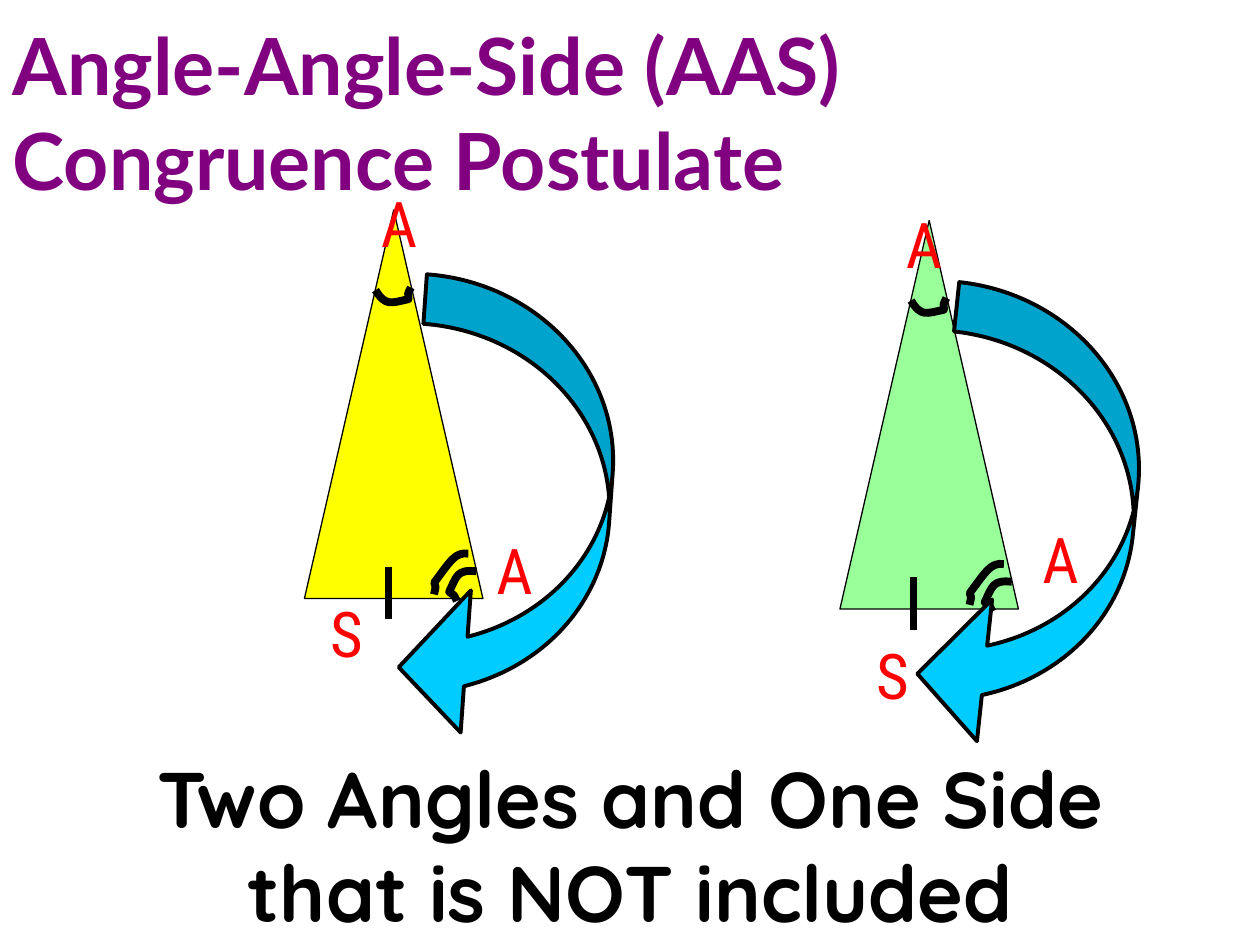
from dataclasses import dataclass

from lxml import etree
from pptx import Presentation
from pptx.dml.color import RGBColor
from pptx.enum.shapes import MSO_CONNECTOR, MSO_SHAPE
from pptx.enum.text import MSO_ANCHOR, MSO_AUTO_SIZE, PP_ALIGN
from pptx.oxml.ns import qn
from pptx.util import Inches, Pt

TRIANGLE, ARROW = MSO_SHAPE.ISOSCELES_TRIANGLE, MSO_SHAPE.CURVED_DOWN_ARROW
STRAIGHT = MSO_CONNECTOR.STRAIGHT
LEFT, CENTER = PP_ALIGN.LEFT, PP_ALIGN.CENTER
TOP = MSO_ANCHOR.TOP
FIT_NONE, GROW = MSO_AUTO_SIZE.NONE, MSO_AUTO_SIZE.SHAPE_TO_FIT_TEXT

# The slide is a grid of 120 columns by 90 rows
WIDTH, HEIGHT = Inches(10), Inches(7.5)
CELL = WIDTH // 120

BLACK, RED, PURPLE, SKY = "000000", "FF0000", "800080", "00CCFF"

# Start and two Bezier segments of three points, as shares of the mark's box
MARK_CURVE = [(0, 0), (0.11, 0.95), (0.29, 0.86), (0.81, 1),
              (0.89, 0.65), (0.81, 0.8), (1, 0.5)]
# Box in cells from the triangle's corner, and rotation
ANGLE_MARKS = [
    ((7, 7, 3.24, 1.92), 339.3),
    ((11.2, 33.9, 5.04, 1.2), 123.3),
    ((13.36, 34.72, 3.24, 1.92), 106.7),
]


@dataclass
class Figure:
    """A marked triangle; offsets count cells from its box's corner."""
    box: tuple
    fill: str
    tick: tuple
    arrow: tuple
    turn: float
    labels: list


FIGURES = [
    Figure((29, 20, 17, 37), "FFFF00", (8, 34), (-2.6, 19.4), 94.1,
           [("A", 6, -3), ("A", 17, 30), ("S", 1, 36)]),
    Figure((80, 21, 17, 37), "99FF99", (7, 34), (-3.7, 19.4), 96.1,
           [("A", 5, -2), ("A", 18, 28), ("S", 2, 39)]),
]


def color(value):
    return RGBColor.from_string(value)


def cells(*counts):
    return [round(count * CELL) for count in counts]


def paint(shape, fill, line_width):
    shape.shadow.inherit = False
    shape.fill.solid()
    shape.fill.fore_color.rgb = color(fill)
    shape.line.color.rgb = color(BLACK)
    shape.line.width = Pt(line_width)


def write(frame, words, font, size, ink, bold=False, align=CENTER,
          wrap=True, fit=GROW):
    frame.word_wrap = wrap
    frame.auto_size = fit
    frame.vertical_anchor = TOP
    paragraph = frame.paragraphs[0]
    paragraph.alignment = align
    run = paragraph.add_run()
    run.text = words
    run.font.name, run.font.size, run.font.bold = font, Pt(size), bold
    run.font.color.rgb = color(ink)


def curve_segments(shape):
    """Turn each three straight segments into one cubic Bezier."""
    lines = list(shape._element.iter(qn("a:lnTo")))
    for first in range(0, len(lines), 3):
        cubic = etree.Element(qn("a:cubicBezTo"))
        lines[first].addprevious(cubic)
        for line in lines[first:first + 3]:
            cubic.append(line[0])
            line.getparent().remove(line)


def add_angle_mark(shapes, box, turn, fill):
    left, top, width, height = box
    start, *rest = [cells(left + x * width, top + y * height)
                    for x, y in MARK_CURVE]
    builder = shapes.build_freeform(*start)
    builder.add_line_segments(rest, close=False)
    mark = builder.convert_to_shape()
    curve_segments(mark)
    mark.rotation = turn
    paint(mark, fill, 4.5)


def add_side_tick(shapes, x, y):
    tick = shapes.add_connector(STRAIGHT, *cells(x, y, x, y + 5))
    tick.line.color.rgb = color(BLACK)
    tick.line.width = Pt(4.5)
    etree.SubElement(tick._element.spPr, qn("a:effectLst"))


def add_triangle(shapes, figure):
    left, top = figure.box[:2]
    paint(shapes.add_shape(TRIANGLE, *cells(*figure.box)), figure.fill, 0.75)
    for (dx, dy, width, height), turn in ANGLE_MARKS:
        add_angle_mark(shapes, (left + dx, top + dy, width, height), turn,
                       figure.fill)
    add_side_tick(shapes, left + figure.tick[0], top + figure.tick[1])


def add_reading_order(shapes, figure):
    """The curved arrow and the letters it passes."""
    left, top = figure.box[:2]
    dx, dy = figure.arrow
    arrow = shapes.add_shape(ARROW, *cells(left + dx, top + dy, 44.3, 19))
    arrow.rotation = figure.turn
    for index, share in enumerate((0.249, 0.714, 0.333)):
        arrow.adjustments[index] = share
    paint(arrow, SKY, 2.25)
    for letter, dx, dy in figure.labels:
        label = shapes.add_textbox(*cells(left + dx, top + dy, 6, 9))
        write(label.text_frame, letter, "Roboto Condensed", 36, RED,
              wrap=False, fit=FIT_NONE)


def add_title(shapes, box):
    title = shapes.title
    title.left, title.top, title.width, title.height = cells(*box)
    write(title.text_frame, "Angle-Angle-Side (AAS) Congruence Postulate",
          "Lato", 45, PURPLE, bold=True, align=LEFT)


def add_caption(shapes, box):
    caption = shapes.add_textbox(*cells(*box))
    write(caption.text_frame, "Two Angles and One Side that is NOT included",
          "Quicksand", 45, BLACK, bold=True)


def main():
    deck = Presentation()
    deck.slide_width, deck.slide_height = WIDTH, HEIGHT
    title_only = deck.slide_layouts[5]
    shapes = deck.slides.add_slide(title_only).shapes
    add_title(shapes, (0, 1, 120, 19.2))
    for figure in FIGURES:
        add_triangle(shapes, figure)
    add_caption(shapes, (12, 70.8, 96, 19.2))
    for figure in FIGURES:
        add_reading_order(shapes, figure)
    deck.save("out.pptx")


if __name__ == "__main__":
    main()
